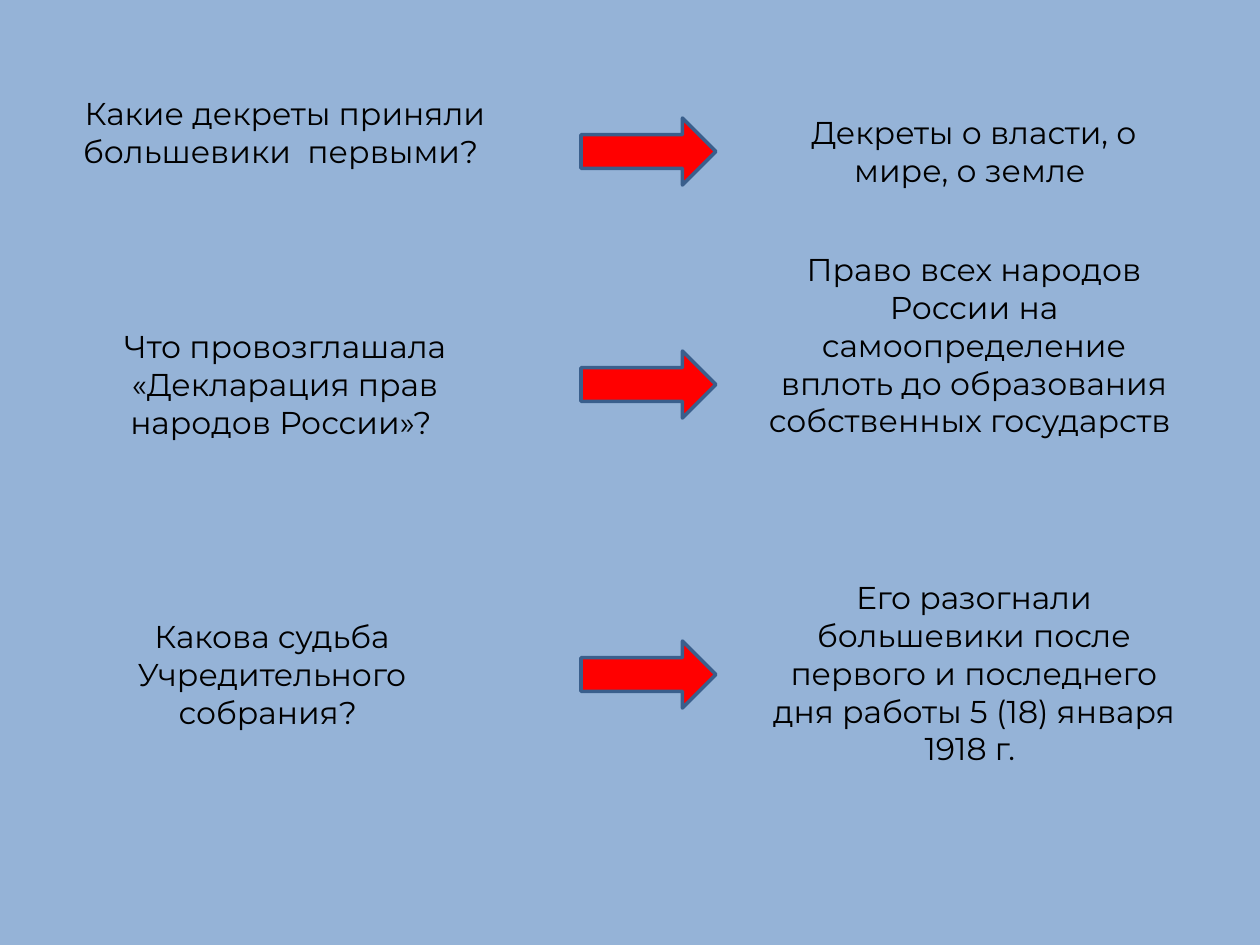
from dataclasses import dataclass

from pptx import Presentation
from pptx.dml.color import RGBColor
from pptx.enum.shapes import MSO_SHAPE
from pptx.enum.text import MSO_ANCHOR, MSO_AUTO_SIZE, PP_ALIGN
from pptx.util import Emu, Pt

PX_PER_INCH = 126
SLIDE_W, SLIDE_H = 1260, 945
BOX_W = 436
ANSWER_X = 756
ARROW_X, ARROW_W, ARROW_H = 581, 135, 67


def px(n):
    return Emu(round(n * 914400 / PX_PER_INCH))


@dataclass(frozen=True)
class Theme:
    background: RGBColor = RGBColor(0x95, 0xB3, 0xD7)
    text: RGBColor = RGBColor(0x00, 0x00, 0x00)
    arrow: RGBColor = RGBColor(0xFF, 0x00, 0x00)
    outline: RGBColor = RGBColor(0x3A, 0x5F, 0x8C)
    font: str = "Montserrat"
    body: Pt = Pt(18)
    line: Pt = Pt(2)


class Builder:
    def __init__(self, s, theme):
        self.s = s
        self.theme = theme

    def background(self):
        fill = self.s.background.fill
        fill.solid()
        fill.fore_color.rgb = self.theme.background

    def text(self, x, y, h, words):
        sp = self.s.shapes.add_textbox(px(x), px(y), px(BOX_W), px(h))
        tf = sp.text_frame
        tf.word_wrap = True
        tf.auto_size = MSO_AUTO_SIZE.SHAPE_TO_FIT_TEXT
        tf.vertical_anchor = MSO_ANCHOR.TOP
        p = tf.paragraphs[0]
        p.alignment = PP_ALIGN.CENTER
        r = p.add_run()
        r.text = words
        r.font.name = self.theme.font
        r.font.size = self.theme.body
        r.font.color.rgb = self.theme.text

    def arrow(self, y):
        sp = self.s.shapes.add_shape(
            MSO_SHAPE.RIGHT_ARROW, px(ARROW_X), px(y), px(ARROW_W), px(ARROW_H)
        )
        sp.shadow.inherit = False
        sp.fill.solid()
        sp.fill.fore_color.rgb = self.theme.arrow
        sp.line.color.rgb = self.theme.outline
        sp.line.width = self.theme.line


ROWS = [
    (
        (67, 88, 127, "Какие декреты приняли большевики  первыми? "),
        118,
        (ANSWER_X, 107, 89, "Декреты о власти, о мире, о земле "),
    ),
    (
        (67, 321, 127, "Что провозглашала «Декларация прав народов России»? "),
        351,
        (ANSWER_X, 244, 280, "Право всех народов России на самоопределение "
                             "вплоть до образования собственных государств "),
    ),
    (
        (54, 611, 127, "Какова судьба Учредительного собрания? "),
        641,
        (ANSWER_X, 572, 204, "Его разогнали большевики после первого и последнего "
                             "дня работы 5 (18) января 1918 г. "),
    ),
]


def main():
    prs = Presentation()
    prs.slide_width, prs.slide_height = px(SLIDE_W), px(SLIDE_H)
    b = Builder(prs.slides.add_slide(prs.slide_layouts[6]), Theme())
    b.background()
    for question, arrow_y, answer in ROWS:
        b.text(*question)
        b.arrow(arrow_y)
        b.text(*answer)
    prs.save("out.pptx")


if __name__ == "__main__":
    main()
